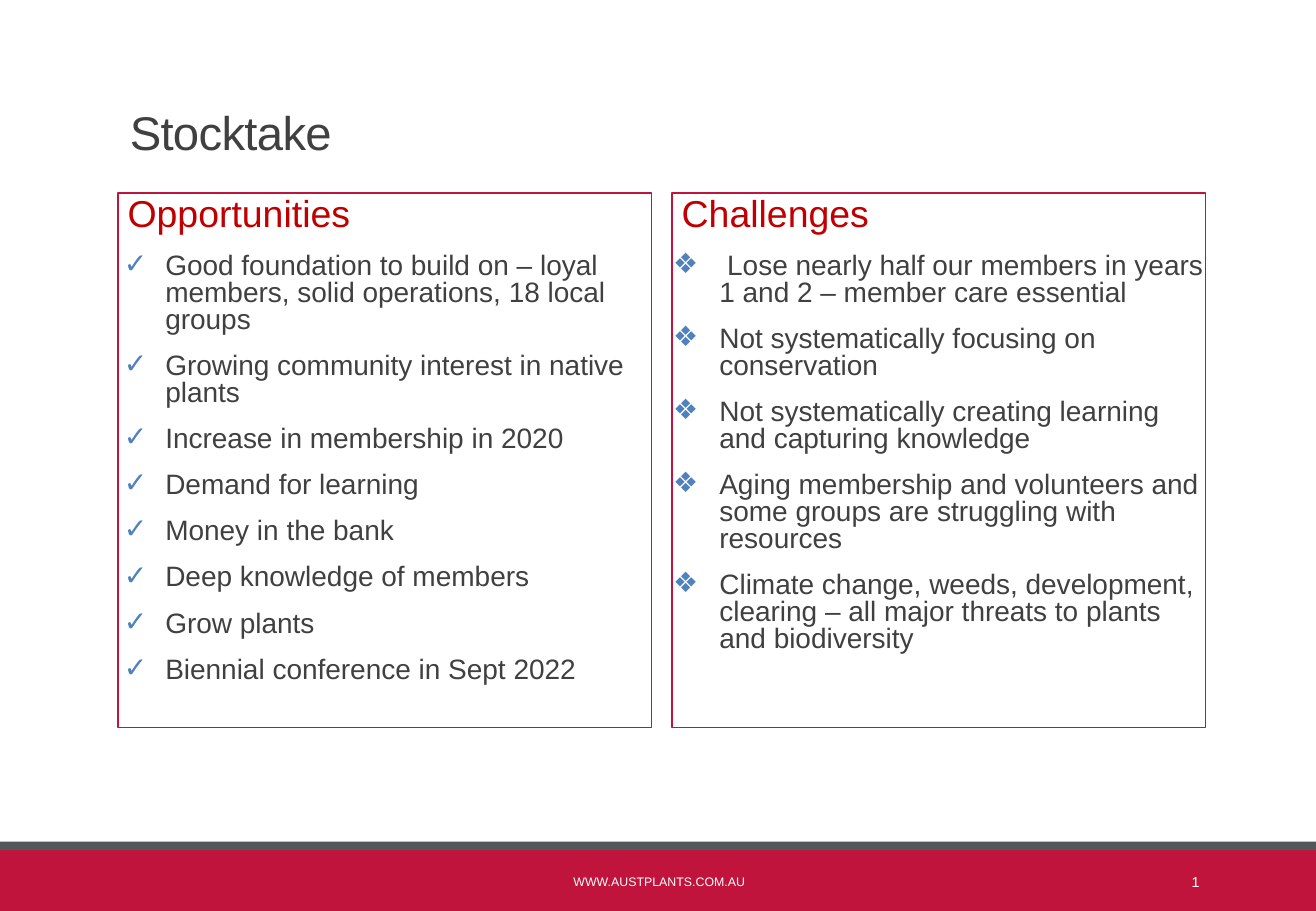
"""Build the Stocktake slide comparing opportunities and challenges."""
from dataclasses import dataclass

from lxml.etree import SubElement
from pptx import Presentation
from pptx.dml.color import RGBColor
from pptx.enum.shapes import MSO_SHAPE as Shape
from pptx.enum.text import MSO_ANCHOR as Anchor, PP_ALIGN as Align
from pptx.oxml.ns import qn
from pptx.util import Inches, Pt


@dataclass(frozen=True)
class Theme:
    font: str = "Arial"
    crimson: str = "C0143C"
    slate: str = "54585B"
    border: str = "BF143B"
    heading: str = "C00000"
    text: str = "404040"
    bullet: str = "4F81BD"
    white: str = "FFFFFF"
    title_size: float = 28
    heading_size: float = 22.2
    body_size: float = 16.6
    address_size: float = 7.3
    number_size: float = 8.5


theme = Theme()


def write(paragraph, text, size, color, **formats):
    run = paragraph.add_run()
    run.text = text
    run.font.name = theme.font
    run.font.size = Pt(size)
    run.font.color.rgb = RGBColor.from_string(color)
    for name, value in formats.items():
        setattr(paragraph, name, value)
    return run


def add_box(box, fill=None, line=None):
    shape = slide.shapes.add_shape(Shape.RECTANGLE, *map(Inches, box))
    shape.shadow.inherit = False
    if fill:
        shape.fill.solid()
        shape.fill.fore_color.rgb = RGBColor.from_string(fill)
    else:
        shape.fill.background()
    if line:
        shape.line.color.rgb = RGBColor.from_string(line)
        shape.line.width = Pt(0.75)
    else:
        shape.line.fill.background()
    return shape


deck = Presentation()
deck.slide_width, deck.slide_height = Inches(10.83), Inches(7.5)
slide = deck.slides.add_slide(deck.slide_layouts[6])

add_box((0, 7, 10.83, 0.5), fill=theme.crimson)
add_box((0, 6.93, 10.83, 0.07), fill=theme.slate)

labels = [
    ("Stocktake", (0.97, 0.31, 8.94, 1.06), theme.title_size, theme.text,
     Anchor.BOTTOM, {"alignment": Align.LEFT, "line_spacing": 0.85}, -40),
    ("WWW.AUSTPLANTS.COM.AU", (3.28, 7.06, 4.29, 0.4), theme.address_size, theme.white,
     Anchor.MIDDLE, {"alignment": Align.CENTER}, 0),
    ("1", (8.8, 7.06, 1.17, 0.4), theme.number_size, theme.white,
     Anchor.MIDDLE, {"alignment": Align.RIGHT}, 0),
]
for text, box, size, color, anchor, formats, tracking in labels:
    frame = slide.shapes.add_textbox(*map(Inches, box)).text_frame
    frame.word_wrap = True
    frame.vertical_anchor = anchor
    run = write(frame.paragraphs[0], text, size, color, **formats)
    if tracking:
        run.font._element.set("spc", str(tracking))

columns = [
    ("Opportunities", 0.97, "✓", 0.34, [
        "Good foundation to build on – loyal members, solid operations, 18 local groups",
        "Growing community interest in native plants",
        "Increase in membership in 2020",
        "Demand for learning",
        "Money in the bank",
        "Deep knowledge of members",
        "Grow plants",
        "Biennial conference in Sept 2022",
    ]),
    ("Challenges", 5.53, "❖", 0.38, [
        " Lose nearly half our members in years 1 and 2 – member care essential",
        "Not systematically focusing on conservation",
        "Not systematically creating learning and capturing knowledge",
        "Aging membership and volunteers and some groups are struggling with resources",
        "Climate change, weeds, development, clearing – all major threats to plants "
        "and biodiversity",
    ]),
]
frame_formats = {
    "word_wrap": True,
    "vertical_anchor": Anchor.TOP,
    "margin_left": 0,
    "margin_right": 0,
    "margin_top": Inches(0.05),
    "margin_bottom": Inches(0.05),
}
spacing = {"alignment": Align.LEFT, "line_spacing": 0.8, "space_after": Pt(1.6)}

for heading, left, marker, hanging, points in columns:
    frame = add_box((left, 1.59, 4.39, 4.4), line=theme.border).text_frame
    for name, value in frame_formats.items():
        setattr(frame, name, value)
    heading_line = frame.paragraphs[0]
    heading_line._p.get_or_add_pPr().set("marL", str(Inches(0.08)))
    write(heading_line, heading, theme.heading_size, theme.heading, **spacing)
    for point in points:
        paragraph = frame.add_paragraph()
        properties = paragraph._p.get_or_add_pPr()
        properties.set("marL", str(Inches(0.39)))
        properties.set("indent", str(-Inches(hanging)))
        SubElement(SubElement(properties, qn("a:buClr")), qn("a:srgbClr"), val=theme.bullet)
        SubElement(properties, qn("a:buFont"), typeface=theme.font)
        SubElement(properties, qn("a:buChar"), char=marker)
        write(paragraph, point, theme.body_size, theme.text, space_before=Pt(9.8), **spacing)

deck.save("out.pptx")
